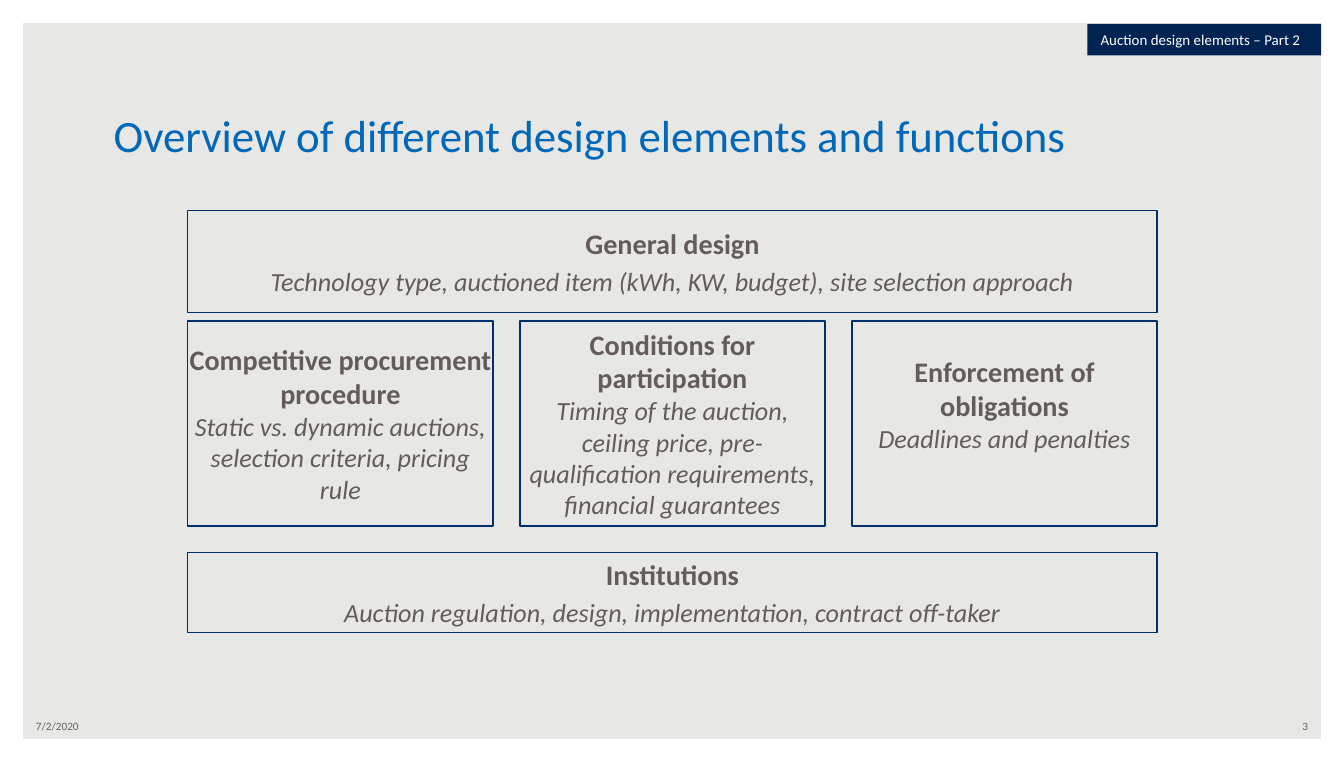
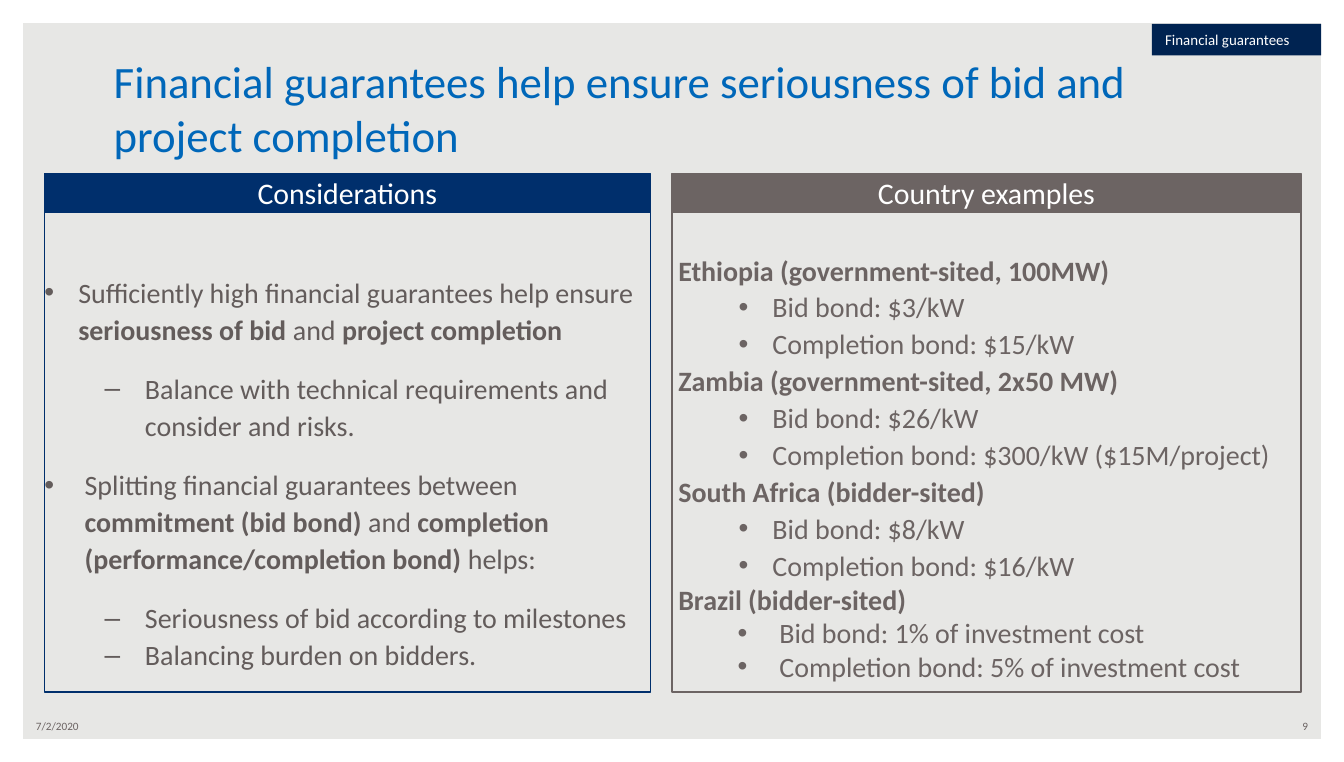
from lxml import etree
from pptx import Presentation
from pptx.dml.color import RGBColor
from pptx.enum import shapes, text
from pptx.oxml.ns import qn
from pptx.util import Cm, Pt

BLUE = RGBColor(0x00, 0x67, 0xB9)
NAVY = RGBColor(0x00, 0x2F, 0x6C)
DARK_NAVY = RGBColor(0x00, 0x23, 0x51)
GREY = RGBColor(0x6C, 0x64, 0x63)
DARK_GREY = RGBColor(0x63, 0x5C, 0x5B)
PAPER = RGBColor(0xE7, 0xE7, 0xE5)
WHITE = RGBColor(0xFF, 0xFF, 0xFF)

FONT = "Calibri"
WIDTH, HEIGHT = 25.4, 14.4
FRAME = 0.43
TITLE_BOTTOM = 3.18
TITLE_HEIGHT = {1: 1.27, 2: 2.31}
DATE = "7/2/2020"

GENERAL = ("General design", "Technology type, auctioned item (kWh, KW, budget), site selection approach")
INSTITUTIONS = ("Institutions", "Auction regulation, design, implementation, contract off-taker")
FUNCTIONS = [
    ("Competitive procurement procedure", "Static vs. dynamic auctions, selection criteria, pricing rule", 0),
    ("Conditions for participation",
     "Timing of the auction, ceiling price, pre-qualification requirements, financial guarantees", 0),
    ("Enforcement of obligations", "Deadlines and penalties", 0.75),
]

# STYLES
STYLES = {
    "point": ("•", 0.64, 0.64, 1.1, 12),
    "wide point": ("•", 0.76, 0.76, 1.1, 12),
    "dash": ("–", 1.9, 0.76, 1.1, 12),
    "tight dash": ("–", 1.9, 0.76, 1.1, 0),
    "country": (None, 0.12, 0, 1.1, 0),
    "bond": ("•", 1.9, 0.64, 1.1, 0),
    "last country": (None, 0.12, 0, 1.0, 0),
    "last bond": ("•", 2.03, 0.79, 1.0, 0),
}
CONSIDERATIONS = [
    ("point", "Sufficiently high financial guarantees help ensure *seriousness of bid *and *project completion*"),
    ("dash", "Balance with technical requirements and consider and risks."),
    ("wide point", "Splitting financial guarantees between *commitment (bid bond) *and "
                   "*completion (performance/completion bond)* helps:"),
    ("tight dash", "Seriousness of bid according to milestones"),
    ("dash", "Balancing burden on bidders."),
]
COUNTRIES = [
    ("country", "*Ethiopia (government-sited, 100MW)*"),
    ("bond", "Bid bond: $3/kW"),
    ("bond", "Completion bond: $15/kW"),
    ("country", "*Zambia (government-sited, 2x50 MW)*"),
    ("bond", "Bid bond: $26/kW"),
    ("bond", "Completion bond: $300/kW ($15M/project)"),
    ("country", "*South Africa (bidder-sited)*"),
    ("bond", "Bid bond: $8/kW"),
    ("bond", "Completion bond: $16/kW"),
    ("last country", "*Brazil (bidder-sited)*"),
    ("last bond", "Bid bond: 1% of investment cost"),
    ("last bond", "Completion bond: 5% of investment cost"),
]
PANELS = [
    ("Considerations", CONSIDERATIONS, 0.84, 11.45, 1.13, NAVY, DARK_GREY),
    ("Country examples", COUNTRIES, 12.7, 11.89, 0.71, GREY, GREY),
]


def set_font(target, size, color, bold=False, italic=False):
    f = target.font
    f.name, f.size, f.bold, f.italic = FONT, Pt(size), bold, italic
    f.color.rgb = color


def set_frame(tf, anchor, left=0.0, top=0.0, bottom=0.0):
    tf.word_wrap = True
    tf.vertical_anchor = anchor
    tf.margin_left = tf.margin_right = Cm(left)
    tf.margin_top, tf.margin_bottom = Cm(top), Cm(bottom)


def add_box(s, x, y, w, h, fill=None, line=None, kind=shapes.MSO_SHAPE.RECTANGLE):
    sp = s.shapes.add_shape(kind, Cm(x), Cm(y), Cm(w), Cm(h))
    sp.shadow.inherit = False
    if fill is None:
        sp.fill.background()
    else:
        sp.fill.solid()
        sp.fill.fore_color.rgb = fill
    if line is None:
        sp.line.fill.background()
    else:
        sp.line.color.rgb = line
        sp.line.width = Pt(0.75)
    return sp


def write_line(sp, words, size, color, align=text.PP_ALIGN.LEFT, anchor=text.MSO_ANCHOR.MIDDLE,
               left=0.25, top=0.0, bottom=0.0):
    set_frame(sp.text_frame, anchor, left, top, bottom)
    p = sp.text_frame.paragraphs[0]
    p.text, p.alignment = words, align
    set_font(p, size, color)


def add_label(s, x, y, w, h, words, size, color, **layout):
    write_line(s.shapes.add_textbox(Cm(x), Cm(y), Cm(w), Cm(h)), words, size, color, **layout)


def start_slide(prs, number):
    s = prs.slides.add_slide(prs.slide_layouts[6])
    frame = add_box(s, 0, 0, WIDTH, HEIGHT, fill=WHITE, kind=shapes.MSO_SHAPE.FRAME)
    frame.adjustments[0] = 0.03
    add_label(s, FRAME, 13.46, 5.92, 0.51, DATE, 6, GREY)
    add_label(s, 19.05, 13.46, 5.92, 0.51, number, 6, GREY, align=text.PP_ALIGN.RIGHT)
    return s


def add_heading(s, title, lines, tag, tag_width):
    h = TITLE_HEIGHT[lines]
    add_label(s, 1.9, TITLE_BOTTOM - h, 21.6, h, title, 24, BLUE,
              anchor=text.MSO_ANCHOR.BOTTOM, top=0.13, bottom=0.13)
    sp = add_box(s, WIDTH - FRAME - tag_width, 0.45, tag_width, 0.6, fill=DARK_NAVY)
    write_line(sp, tag, 8, WHITE)


def add_element(s, x, y, w, h, name, details, gap=0, bottom=0):
    tf = add_box(s, x, y, w, h, line=NAVY).text_frame
    set_frame(tf, text.MSO_ANCHOR.MIDDLE, bottom=bottom)
    head, body = tf.paragraphs[0], tf.add_paragraph()
    head.text, body.text = name, details
    head.alignment = body.alignment = text.PP_ALIGN.CENTER
    head.space_after = Pt(gap)
    set_font(head, 15.1, DARK_GREY, bold=True)
    set_font(body, 14, DARK_GREY, italic=True)


def add_item(p, style, words, color):
    bullet, margin, hang, spacing, after = STYLES[style]
    pPr = p._p.get_or_add_pPr()
    pPr.set("marL", str(Cm(margin)))
    pPr.set("indent", str(-Cm(hang)))
    if bullet:
        etree.SubElement(pPr, qn("a:buFont")).set("typeface", "Arial")
        etree.SubElement(pPr, qn("a:buChar")).set("char", bullet)
    p.alignment = text.PP_ALIGN.LEFT
    p.line_spacing, p.space_after = spacing, Pt(after)
    set_font(p, 15, color)
    for i, part in enumerate(words.split("*")):
        if part:
            r = p.add_run()
            r.text = part
            set_font(r, 15, color, bold=i % 2 == 1)


def add_panel(s, name, items, x, w, top, line, color):
    tf = add_box(s, x, 4.01, w, 9.07, line=line).text_frame
    set_frame(tf, text.MSO_ANCHOR.TOP, top=top)
    for i, (style, words) in enumerate(items):
        add_item(tf.add_paragraph() if i else tf.paragraphs[0], style, words, color)
    header = add_box(s, x, 3.28, w, 0.73, fill=line, line=line)
    write_line(header, name, 16, WHITE, align=text.PP_ALIGN.CENTER, left=0)


def build_overview(prs):
    s = start_slide(prs, "3")
    x, w, column, y = 3.55, 18.32, 5.77, 6.07
    step = (w - column) / (len(FUNCTIONS) - 1)
    add_element(s, x, 3.98, w, 1.93, *GENERAL, gap=3)
    for i, (name, details, bottom) in enumerate(FUNCTIONS):
        add_element(s, x + i * step, y, column, 3.87, name, details, bottom=bottom)
    add_element(s, x, 10.44, w, 1.51, *INSTITUTIONS, gap=3)
    add_heading(s, "Overview of different design elements and functions", 1,
                "Auction design elements – Part 2", 4.42)


def build_guarantees(prs):
    s = start_slide(prs, "9")
    for panel in PANELS:
        add_panel(s, *panel)
    add_heading(s, "Financial guarantees help ensure seriousness of bid and project completion", 2,
                "Financial guarantees", 3.2)


def main():
    prs = Presentation()
    prs.slide_width, prs.slide_height = Cm(WIDTH), Cm(HEIGHT)
    background = prs.slide_master.background.fill
    background.solid()
    background.fore_color.rgb = PAPER
    build_overview(prs)
    build_guarantees(prs)
    prs.save("out.pptx")


if __name__ == "__main__":
    main()
